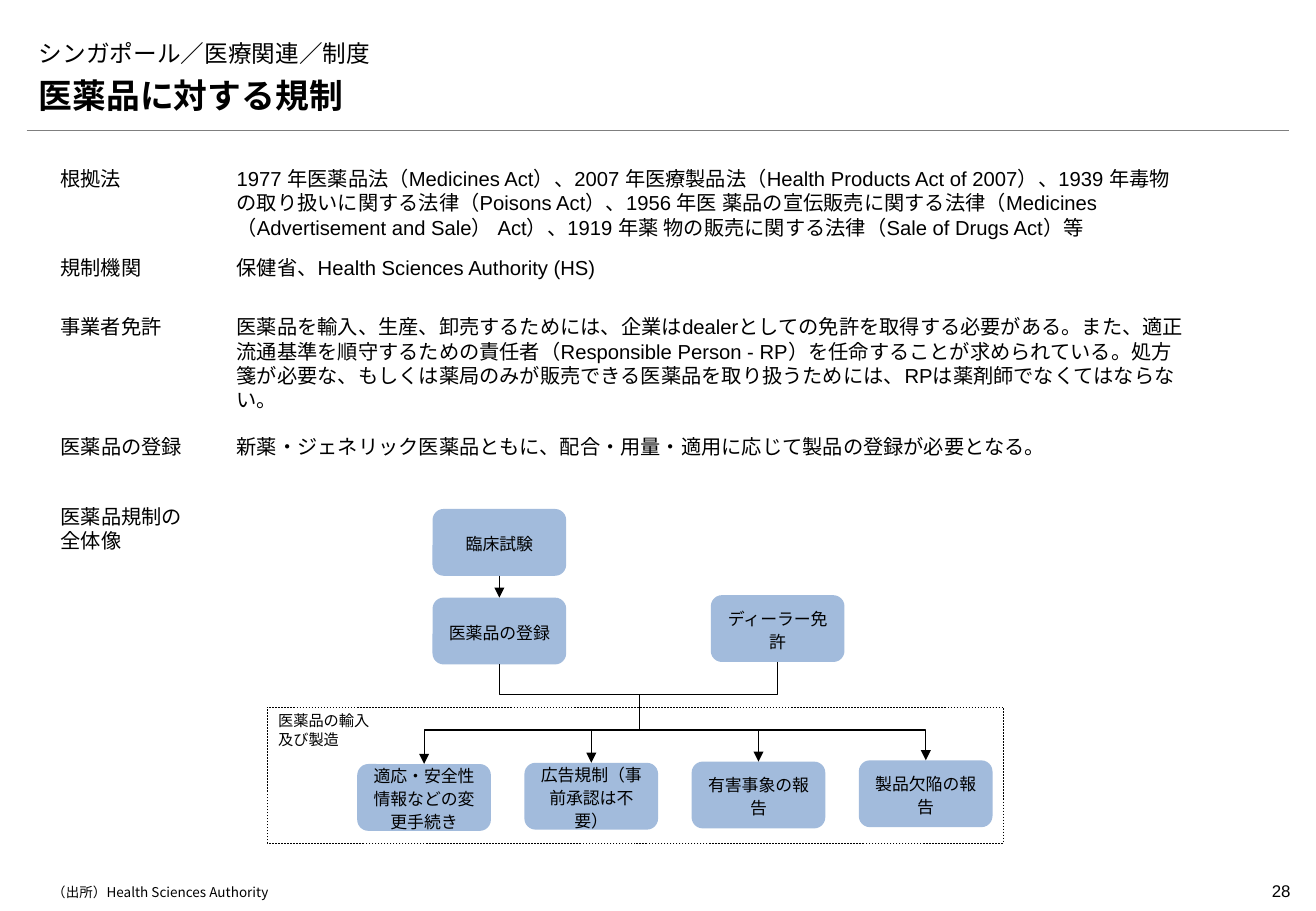
from lxml import etree
from pptx import Presentation
from pptx.dml.color import RGBColor
from pptx.enum.dml import MSO_LINE
from pptx.enum.shapes import MSO_CONNECTOR, MSO_SHAPE
from pptx.enum.text import MSO_ANCHOR, PP_ALIGN
from pptx.oxml.ns import qn
from pptx.util import Inches, Pt

STRAIGHT, ELBOW = MSO_CONNECTOR.STRAIGHT, MSO_CONNECTOR.ELBOW
ROUNDED, RECTANGLE = MSO_SHAPE.ROUNDED_RECTANGLE, MSO_SHAPE.RECTANGLE
TOP, MIDDLE, BOTTOM = MSO_ANCHOR.TOP, MSO_ANCHOR.MIDDLE, MSO_ANCHOR.BOTTOM
LEFT, CENTER, RIGHT = PP_ALIGN.LEFT, PP_ALIGN.CENTER, PP_ALIGN.RIGHT
BLACK, GRAY, BLUE = "000000", "7F7F7F", "A2BBDC"
ARIAL, MONTSERRAT, NOTO = "Arial", "Montserrat", "Noto Sans CJK JP"

# Content
TOPIC = "シンガポール／医療関連／制度"
HEADLINE = "医薬品に対する規制"
SOURCE = "（出所）Health Sciences Authority"
PAGE = "28"
ROWS = [  # top, height, label width, label, description
    (1.32, 0.71, 0.94, "根拠法",
     "1977 年医薬品法（Medicines Act）、2007 年医療製品法（Health Products Act of 2007）、"
     "1939 年毒物の取り扱いに関する法律（Poisons Act）、1956 年医 薬品の宣伝販売に関する法律"
     "（Medicines （Advertisement and Sale） Act）、1919 年薬 物の販売に関する法律"
     "（Sale of Drugs Act）等"),
    (2.05, 0.3, 0.94, "規制機関", "保健省、Health Sciences Authority (HS)"),
    (2.54, 0.71, 1.14, "事業者免許",
     "医薬品を輸入、生産、卸売するためには、企業はdealerとしての免許を取得する必要がある。"
     "また、適正流通基準を順守するための責任者（Responsible Person - RP）を任命することが"
     "求められている。処方箋が必要な、もしくは薬局のみが販売できる医薬品を取り扱うためには、"
     "RPは薬剤師でなくてはならない。"),
    (3.53, 0.3, 1.28, "医薬品の登録",
     "新薬・ジェネリック医薬品ともに、配合・用量・適用に応じて製品の登録が必要となる。"),
    (4.1, 0.5, 1.28, "医薬品規制の全体像", None),
]
TRIAL = ("臨床試験", 3.56, 4.19)
REGISTRATION = ("医薬品の登録", 3.56, 4.92)
DEALER = ("ディーラー免許", 5.85, 4.9)
DUTIES = ["適応・安全性情報などの変更手続き", "広告規制（事前承認は不要）",
          "有害事象の報告", "製品欠陥の報告"]
FRAME_LABEL = "医薬品の輸入及び製造"

# Layout in inches
LABEL_LEFT, TEXT_LEFT, TEXT_WIDTH = 0.4, 1.85, 8.03
BOX_WIDTH, BOX_HEIGHT = 1.1, 0.55
DUTY_LEFT, DUTY_TOP, DUTY_STEP, DUTY_RISE = 2.94, 6.29, 1.376, 0.01
UPPER_BUS, LOWER_BUS, TRUNK_X = 5.72, 6.01, 5.26


def color(value):
    return RGBColor.from_string(value)


def write(shape, text, size, font=ARIAL, east_asian=MONTSERRAT, bold=False,
          align=LEFT, anchor=TOP, insets=(0.1, 0.05)):
    frame = shape.text_frame
    frame.word_wrap = True
    frame.vertical_anchor = anchor
    frame.margin_left = frame.margin_right = Inches(insets[0])
    frame.margin_top = frame.margin_bottom = Inches(insets[1])
    frame.text = text
    paragraph = frame.paragraphs[0]
    paragraph.alignment = align
    run = paragraph.runs[0]
    run.font.size, run.font.name, run.font.bold = Pt(size), font, bold
    run.font.color.rgb = color(BLACK)
    properties = run.font._element
    properties.set("lang", "ja-JP")
    latin = properties.find(qn("a:latin"))
    latin.addnext(etree.Element(qn("a:ea"), typeface=east_asian))
    return paragraph


def add_text(left, top, width, height, text, size, **style):
    box = slide.shapes.add_textbox(*map(Inches, (left, top, width, height)))
    return write(box, text, size, **style)


def add_box(text, left, top):
    box = slide.shapes.add_shape(
        ROUNDED, *map(Inches, (left, top, BOX_WIDTH, BOX_HEIGHT)))
    box.shadow.inherit = False
    box.fill.solid()
    box.fill.fore_color.rgb = color(BLUE)
    box.line.fill.background()
    paragraph = write(box, text, 10, align=CENTER, anchor=MIDDLE)
    paragraph.line_spacing, paragraph.space_after = 1.14, Pt(4)
    return box


def add_line(kind, x1, y1, x2, y2, line_color=BLACK, width=0.75, arrows=()):
    line = slide.shapes.add_connector(kind, *map(Inches, (x1, y1, x2, y2)))
    line.line.color.rgb = color(line_color)
    line.line.width = Pt(width)
    for end in arrows:
        etree.SubElement(line.line._ln, qn(f"a:{end}"), type="triangle")
    etree.SubElement(line._element.spPr, qn("a:effectLst"))
    return line


def add_bracket(left_box, right_box, bus, side, arrows=()):
    """Elbow from a lower left box to a slightly higher right box via a bus."""
    x1, x2 = ((box.left + box.width / 2) / Inches(1) for box in (left_box, right_box))
    y1, y2 = ((box.top + box.height * side) / Inches(1) for box in (left_box, right_box))
    middle_x, middle_y = (x1 + x2) / 2, (y1 + y2) / 2
    half_width, half_height = (y1 - y2) / 2, (x2 - x1) / 2
    bracket = add_line(ELBOW, middle_x + half_width, middle_y + half_height,
                       middle_x - half_width, middle_y - half_height, arrows=arrows)
    properties = bracket._element.spPr
    properties.find(qn("a:xfrm")).set("rot", "5400000")
    guides = properties.find(qn("a:prstGeom")).find(qn("a:avLst"))
    bend = round((y1 - bus) / (y1 - y2) * 100000)
    etree.SubElement(guides, qn("a:gd"), name="adj1", fmla=f"val {bend}")


presentation = Presentation()
presentation.slide_width, presentation.slide_height = Inches(10.83), Inches(7.5)
slide = presentation.slides.add_slide(presentation.slide_layouts[5])

# Heading, rule and footer
title = slide.shapes.title
title.left, title.top, title.width, title.height = map(Inches, (0.22, 0.26, 10.39, 0.34))
write(title, TOPIC, 14, font=MONTSERRAT, anchor=BOTTOM)
add_text(0.22, 0.56, 10.4, 0.44, HEADLINE, 20, font=NOTO, east_asian=NOTO,
         bold=True, anchor=BOTTOM)
add_line(STRAIGHT, 0.22, 1.07, 10.61, 1.07, GRAY, 0.25)
source = add_text(0.43, 7.28, 9.45, 0.16, SOURCE, 8, font=NOTO, east_asian=NOTO,
                  insets=(0, 0))
source._p.get_or_add_pPr().set("marL", str(Inches(0.49)))
source._p.get_or_add_pPr().set("indent", str(-Inches(0.49)))
add_text(9.83, 7.2, 0.79, 0.27, PAGE, 10, align=RIGHT, insets=(0, 0.05))

# Labelled descriptions
for top, height, label_width, label, description in ROWS:
    label_height = 0.3 if description else height
    add_text(LABEL_LEFT, top, label_width, label_height, label, 12)
    if description:
        add_text(TEXT_LEFT, top, TEXT_WIDTH, height, description, 12)

# Flow boxes
trial, registration, dealer = (add_box(*item) for item in (TRIAL, REGISTRATION, DEALER))
duties = [add_box(text, DUTY_LEFT + i * DUTY_STEP, DUTY_TOP - i * DUTY_RISE)
          for i, text in enumerate(DUTIES)]

# Frame around the duties
frame = slide.shapes.add_shape(RECTANGLE, *map(Inches, (2.2, 5.82, 6.06, 1.12)))
frame.shadow.inherit = False
frame.fill.background()
frame.line.color.rgb = color(BLACK)
frame.line.width = Pt(0.25)
frame.line.dash_style = MSO_LINE.DASH
add_text(2.19, 5.81, 1.02, 0.4, FRAME_LABEL, 9)

# Connectors
arrow = add_line(STRAIGHT, 4.11, 4.74, 4.11, 4.92, arrows=["tailEnd"])
arrow.begin_connect(trial, 2)
arrow.end_connect(registration, 0)
add_bracket(registration, dealer, UPPER_BUS, 1)
for first, last in ((0, 3), (1, 2)):
    add_bracket(duties[first], duties[last], LOWER_BUS, 0, ["headEnd", "tailEnd"])
add_line(STRAIGHT, TRUNK_X, UPPER_BUS, TRUNK_X, LOWER_BUS)

presentation.save("out.pptx")
